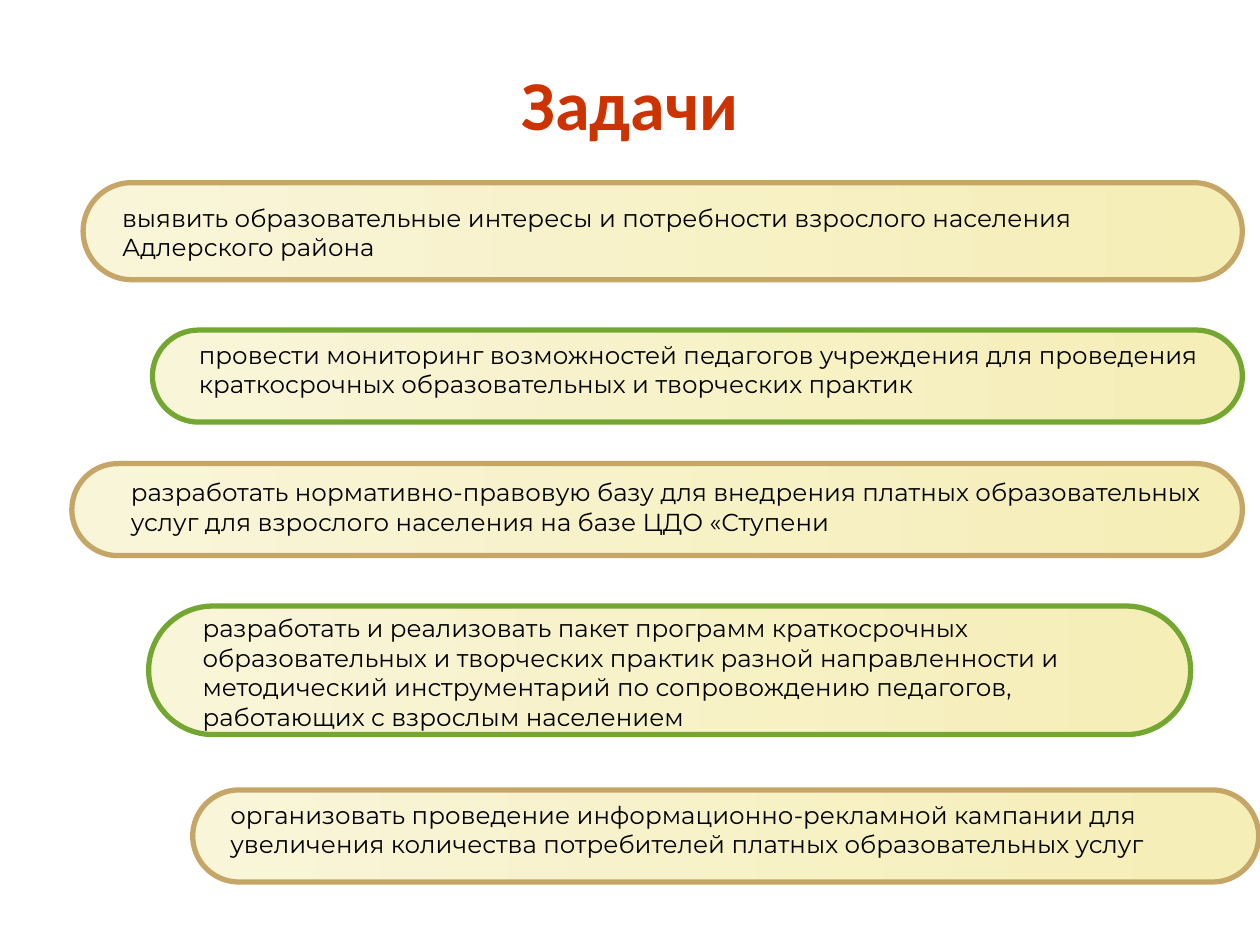
from pptx import Presentation
from pptx.dml.color import RGBColor
from pptx.enum.shapes import MSO_SHAPE
from pptx.enum.text import MSO_ANCHOR, PP_ALIGN
from pptx.util import Inches, Pt

ROUNDED = MSO_SHAPE.ROUNDED_RECTANGLE
TITLE_ONLY = 5

# Content
TITLE = "Задачи"
TAN, GREEN = "C5A667", "74A731"
CREAM, STRAW = "F9F5D9", "F5EEB7"

# Task wording, outline colour, bar (left, top, width, height), text (left, top, width, height)
TASKS = [
    ("выявить образовательные интересы и потребности взрослого населения "
     "Адлерского района",
     TAN, (0.66, 1.45, 9.2, 0.77), (0.87, 1.56, 8.99, 0.57)),
    ("провести мониторинг возможностей педагогов учреждения для проведения "
     "краткосрочных образовательных и творческих практик",
     GREEN, (1.21, 2.62, 8.65, 0.73), (1.48, 2.65, 8.17, 0.57)),
    ("разработать нормативно-правовую базу для внедрения платных "
     "образовательных услуг для взрослого населения на базе ЦДО «Ступени",
     TAN, (0.57, 3.68, 9.29, 0.73), (0.94, 3.74, 8.71, 0.57)),
    ("разработать и реализовать пакет программ краткосрочных образовательных "
     "и творческих практик разной направленности и методический инструментарий "
     "по сопровождению педагогов, работающих с взрослым населением",
     GREEN, (1.18, 4.81, 8.27, 1.02), (1.51, 4.82, 7.77, 1.04)),
    ("организовать проведение информационно-рекламной кампании для увеличения "
     "количества потребителей платных образовательных услуг",
     TAN, (1.53, 6.27, 8.46, 0.73), (1.73, 6.3, 8.14, 0.57)),
]


def color(hex_value):
    return RGBColor.from_string(hex_value)


def inches(box):
    return [Inches(value) for value in box]


def style(paragraph, font_name, size, hex_value, bold=False):
    font = paragraph.font
    font.name, font.size, font.bold = font_name, Pt(size), bold
    font.color.rgb = color(hex_value)


def add_bar(slide, box, outline):
    bar = slide.shapes.add_shape(ROUNDED, *inches(box))
    bar.adjustments[0] = 0.5
    bar.shadow.inherit = False
    bar.fill.gradient()
    bar.fill.gradient_angle = 0
    for stop, position, shade in zip(bar.fill.gradient_stops, (0, 1), (CREAM, STRAW)):
        stop.position = position
        stop.color.rgb = color(shade)
    bar.line.color.rgb = color(outline)
    bar.line.width = Pt(3)


def add_task(slide, wording, box):
    frame = slide.shapes.add_textbox(*inches(box)).text_frame
    frame.word_wrap = True
    frame.text = wording
    style(frame.paragraphs[0], "Montserrat", 14, "000000")


prs = Presentation()
prs.slide_width, prs.slide_height = Inches(10), Inches(7.5)
slide = prs.slides.add_slide(prs.slide_layouts[TITLE_ONLY])

# Title
title = slide.shapes.title
title.left, title.top, title.width, title.height = inches((0.69, 0.28, 8.62, 1.15))
title.text_frame.text = TITLE
title.text_frame.vertical_anchor = MSO_ANCHOR.MIDDLE
heading = title.text_frame.paragraphs[0]
heading.alignment = PP_ALIGN.CENTER
heading.line_spacing = 0.9
style(heading, "Calibri", 40, "CC3300", bold=True)

# Tasks, each on its own bar
for wording, outline, bar_box, text_box in TASKS:
    add_bar(slide, bar_box, outline)
    add_task(slide, wording, text_box)

prs.save("out.pptx")
